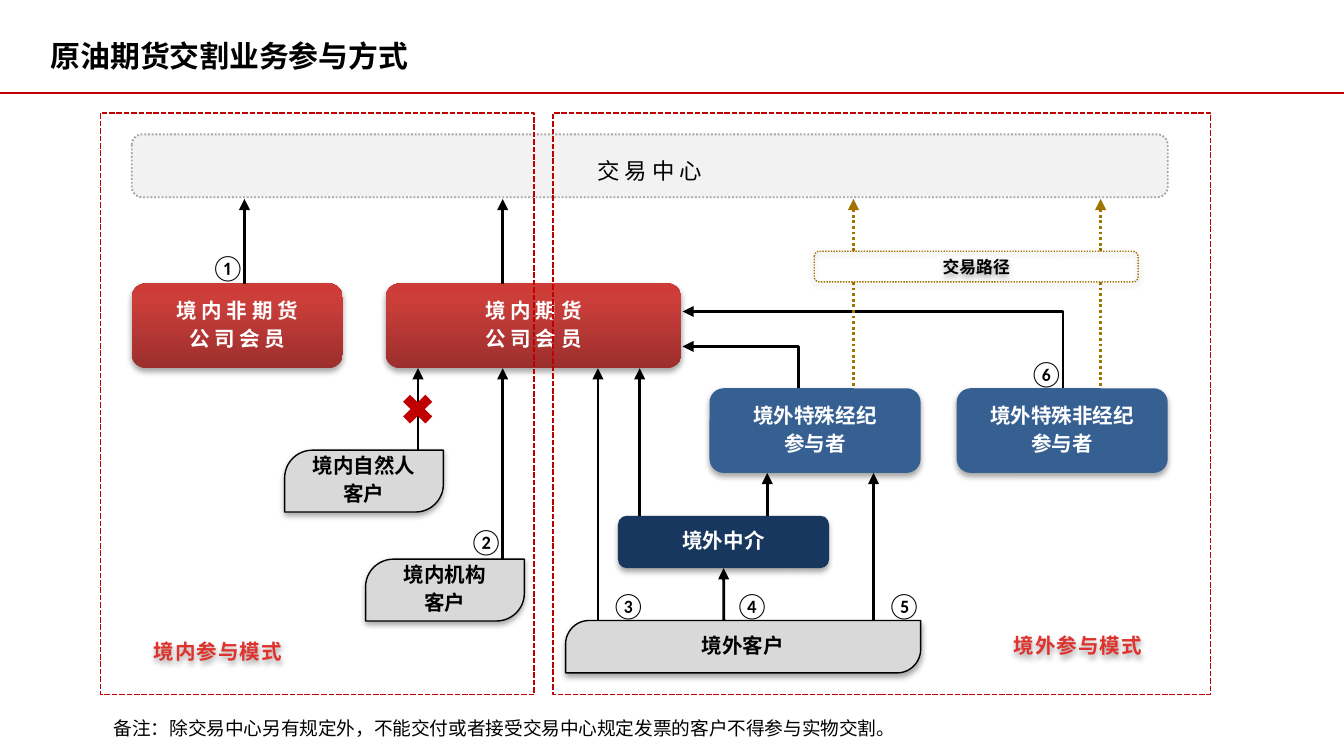
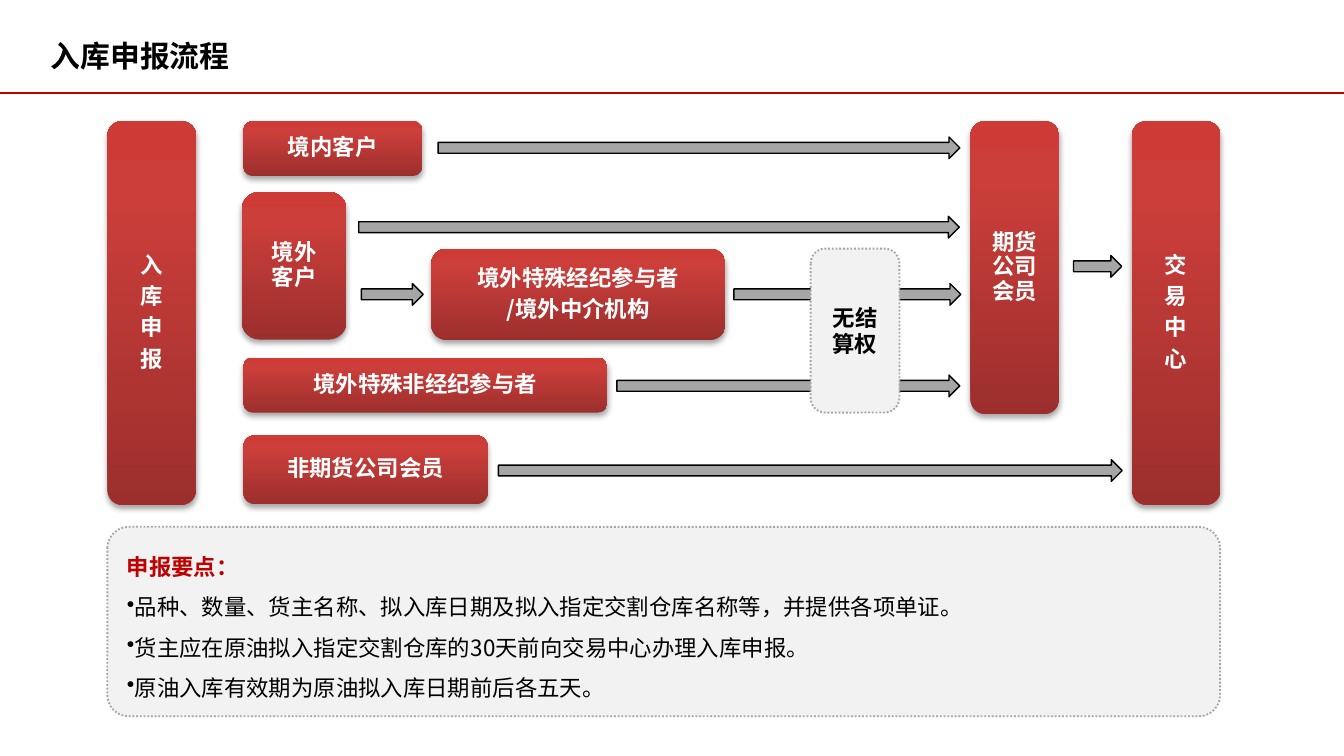
"""Builds two slides on crude oil futures delivery: ways to take part and the inbound filing flow."""
from copy import deepcopy

from lxml.etree import SubElement
from pptx import Presentation
from pptx.dml.color import RGBColor as RGB
from pptx.enum.dml import MSO_LINE as DASH
from pptx.enum.shapes import MSO_CONNECTOR as CONN, MSO_SHAPE as SHP
from pptx.enum.text import MSO_ANCHOR as ANC, PP_ALIGN as AL
from pptx.oxml.ns import qn
from pptx.util import Cm, Pt

C = {
    "black": "000000", "white": "FFFFFF", "red": "C00000", "gold": "A07400",
    "client": "D9D9D9", "pale": "F2F2F2", "grey": "A6A6A6",
    "blue": "376092", "navy": "17375E",
    "grad_dark": "9C2F2D", "grad_mid": "CB3E3A", "grad_top": "CE3B37",
    "mode_top": "E0322D", "mode_low": "A2201C",
}
FONT = "Noto Sans CJK SC"
RED_GRAD = [(0, "grad_dark"), (0.8, "grad_mid"), (1, "grad_top")]
MODE_GRAD = [(0.25, "mode_top"), (1, "mode_low")]

PAD = dict(margin_left=Cm(0.3), margin_right=Cm(0.3), margin_top=Cm(0.3), margin_bottom=Cm(0.3))
FLAT = dict(margin_left=0, margin_right=0, margin_top=0, margin_bottom=0)
TIGHT = dict(alignment=AL.CENTER, line_spacing=0.9, space_after=Pt(3.3))
CENTRE = dict(alignment=AL.CENTER)
BOLD11 = dict(size=Pt(11), bold=True)
BOLD12 = dict(size=Pt(12), bold=True)

BLOCK = dict(shadow=True, frame=PAD, para=TIGHT, font=BOLD11, color="white")
RED = dict(BLOCK, fill=RED_GRAD)
RED12 = dict(RED, font=BOLD12, para=dict(TIGHT, space_after=Pt(3.7)))
BLUE = dict(BLOCK, fill="blue")
NAVY = dict(BLOCK, fill="navy")
CLIENT = dict(BLOCK, fill="client", line=("black", 0.75, None), color="black", adj=(0.449, 0))
PANEL = dict(fill="pale", line=("grey", 1, DASH.ROUND_DOT))
CENTER_BAR = dict(PANEL, font=dict(size=Pt(12)), para=dict(CENTRE, line_spacing=Pt(20)))
POINTS = dict(PANEL, adj=(0.112,), frame=dict(vertical_anchor=ANC.TOP), font=dict(size=Pt(12)),
              para=dict(alignment=AL.LEFT, line_spacing=1.5))
NO_RIGHT = dict(PANEL, font=BOLD12, para=CENTRE)
ZONE = dict(line=("red", 1, DASH.SQUARE_DOT))
ROUTE = dict(line=("gold", 0.75, DASH.ROUND_DOT), shadow=True, frame=FLAT, para=CENTRE,
             font=dict(size=Pt(9), bold=True))
ARROW = dict(fill="grey", line=("black", 0.75, None))
TITLE = dict(font=dict(size=Pt(16), bold=True))
MODE = dict(BLOCK, color="mode_top")
NUMBER = dict(para=CENTRE, font=dict(size=Pt(14), name="Calibri"))
NOTE = dict(frame=dict(margin_top=0, margin_bottom=0, vertical_anchor=ANC.TOP),
            para=dict(line_spacing=1.5), font=dict(size=Pt(10)))


def add(s, kind, box, lines, st):
    box = [Cm(v) for v in box]
    sp = s.shapes.add_shape(kind, *box) if kind else s.shapes.add_textbox(*box)
    for i, v in enumerate(st.get("adj", ())):
        sp.adjustments[i] = v
    fill = st.get("fill")
    if fill is None:
        sp.fill.background()
    elif isinstance(fill, str):
        sp.fill.solid()
        sp.fill.fore_color.rgb = RGB.from_string(C[fill])
    else:
        sp.fill.gradient()
        sp.fill.gradient_angle = 90
        stops = sp._element.spPr.find(qn("a:gradFill")).find(qn("a:gsLst"))
        stops.append(deepcopy(stops[-1]))
        for stop, (pos, name) in zip(sp.fill.gradient_stops, fill):
            stop.position = pos
            stop.color.rgb = RGB.from_string(C[name])
    if "line" in st:
        name, width, dash = st["line"]
        sp.line.color.rgb = RGB.from_string(C[name])
        sp.line.width = Pt(width)
        if dash:
            sp.line.dash_style = dash
    else:
        sp.line.fill.background()
    sp.shadow.inherit = False
    if st.get("shadow"):
        effects = sp._element.spPr.find(qn("a:effectLst"))
        shadow = SubElement(effects, qn("a:outerShdw"), blurRad="40000", dist="23000",
                            dir="5400000", rotWithShape="0")
        tint = SubElement(shadow, qn("a:srgbClr"), val=C["black"])
        SubElement(tint, qn("a:alpha"), val="35000")
    tf = sp.text_frame
    frame = dict(word_wrap=True, vertical_anchor=ANC.MIDDLE) | st.get("frame", {})
    for key, v in frame.items():
        setattr(tf, key, v)
    for i, text in enumerate(lines):
        p = tf.add_paragraph() if i else tf.paragraphs[0]
        for key, v in st.get("para", {}).items():
            setattr(p, key, v)
        r = p.add_run()
        r.text = text
        font = dict(name=FONT) | st["font"]
        for key, v in font.items():
            setattr(r.font, key, v)
        r.font.color.rgb = RGB.from_string(C[st.get("color", "black")])
        SubElement(r._r.get_or_add_rPr(), qn("a:ea"), typeface=font["name"])
    return sp


def link(s, start, end, color="black", width=1.5, dash=None, head=True):
    (x1, y1), (x2, y2) = start, end
    bent = x1 != x2 and y1 != y2
    if bent:
        mx, my, w, h = (x1 + x2) / 2, (y1 + y2) / 2, y1 - y2, x1 - x2
        x1, y1, x2, y2 = mx - w / 2, my + h / 2, mx + w / 2, my - h / 2
    c = s.shapes.add_connector(CONN.ELBOW if bent else CONN.STRAIGHT, Cm(x1), Cm(y1), Cm(x2), Cm(y2))
    pr = c._element.spPr
    if bent:
        pr.find(qn("a:xfrm")).set("rot", "16200000")
        pr.find(qn("a:prstGeom")).set("prst", "bentConnector2")
    c.line.color.rgb = RGB.from_string(C[color])
    c.line.width = Pt(width)
    if dash:
        c.line.dash_style = dash
    if head:
        SubElement(pr.find(qn("a:ln")), qn("a:tailEnd"), type="triangle")
    SubElement(pr, qn("a:effectLst"))
    return c


prs = Presentation()
prs.slide_width, prs.slide_height = Cm(25.4), Cm(14.29)
slides = []
for title in ("原油期货交割业务参与方式", "入库申报流程"):
    s = prs.slides.add_slide(prs.slide_layouts[6])
    link(s, (0, 1.75), (25.4, 1.75), "red", 1, head=False)
    add(s, None, (0.71, 0.36, 23.8, 1.4), [title], TITLE)
    slides.append(s)
modes, flow = slides

add(modes, SHP.ROUNDED_RECTANGLE, (2.49, 2.54, 19.58, 1.19), ["交 易 中 心"], CENTER_BAR)
for box, lines in [
    ((5.38, 8.51, 3, 1.17), ["境内自然人", "客户"]),
    ((6.91, 10.57, 3, 1.17), ["境内机构", "客户"]),
    ((10.69, 11.73, 6.71, 0.99), ["境外客户"]),
]:
    add(modes, SHP.ROUND_2_DIAG_RECTANGLE, box, lines, CLIENT)
for box, lines, st in [
    ((7.29, 5.36, 5.59, 1.6), ["境 内 期 货", "公 司 会 员"], RED),
    ((2.49, 5.36, 3.99, 1.6), ["境 内 非 期 货", "公 司 会 员"], RED),
    ((13.41, 7.34, 3.99, 1.6), ["境外特殊经纪", "参与者"], BLUE),
    ((18.08, 7.34, 3.99, 1.6), ["境外特殊非经纪", "参与者"], BLUE),
]:
    add(modes, SHP.ROUNDED_RECTANGLE, box, lines, st)
broker = add(modes, SHP.ROUNDED_RECTANGLE, (11.68, 9.75, 3.99, 0.99), ["境外中介"], NAVY)

for left, width in [(1.9, 8.2), (10.46, 12.42)]:
    add(modes, SHP.RECTANGLE, (left, 2.13, width, 11), [], ZONE)
for left, top, text in [(2.31, 11.94, "境内参与模式"), (18.57, 11.84, "境外参与模式")]:
    r = add(modes, None, (left, top, 3.61, 0.79), [text], MODE).text_frame.paragraphs[0].runs[0]
    r.font.fill.gradient()
    r.font.fill.gradient_angle = 270
    for stop, (pos, name) in zip(r.font.fill.gradient_stops, MODE_GRAD):
        stop.position = pos
        stop.color.rgb = RGB.from_string(C[name])
    r._r.get_or_add_rPr().set("spc", "50")

for x, y1, y2 in [
    (4.62, 5.36, 3.76), (9.5, 5.36, 3.76), (7.9, 8.51, 6.96), (9.5, 10.57, 6.96),
    (11.3, 11.73, 6.96), (12.09, 9.75, 6.96), (14.5, 9.75, 8.94), (16.51, 11.73, 8.94),
]:
    link(modes, (x, y1), (x, y2))
link(modes, (13.68, 11.73), (13.68, 10.74)).end_connect(broker, 2)
for start, y in [((15.09, 7.34), 6.55), ((20.09, 7.34), 5.89)]:
    link(modes, start, (12.9, y))
for x in (16.13, 20.8):
    link(modes, (x, 4.75), (x, 3.76), "gold", dash=DASH.ROUND_DOT)
    link(modes, (x, 5.33), (x, 7.34), "gold", dash=DASH.ROUND_DOT, head=False)
add(modes, SHP.ROUNDED_RECTANGLE, (15.39, 4.75, 6.12, 0.58), ["交易路径"], ROUTE)
add(modes, SHP.MATH_MULTIPLY, (7.49, 7.34, 0.81, 0.79), [], dict(fill="red"))

spots = [(3.73, 4.75), (8.61, 9.93), (11.3, 11.15), (13.64, 11.15), (16.51, 11.15), (19.2, 6.76)]
for number, (x, y) in zip("①②③④⑤⑥", spots):
    add(modes, None, (x, y, 0.89, 0.58), [number], NUMBER)
add(modes, None, (1.9, 13.34, 21, 0.64),
    ["备注：除交易中心另有规定外，不能交付或者接受交易中心规定发票的客户不得参与实物交割。"], NOTE)

for left, top, width in [
    (8.28, 2.59, 9.86), (6.78, 4.09, 11.35), (6.83, 5.36, 1.17), (13.87, 5.36, 4.29),
    (11.66, 7.09, 6.48), (9.42, 8.69, 11.79), (20.29, 4.83, 0.91),
]:
    add(flow, SHP.RIGHT_ARROW, (left, top, width, 0.41), [], ARROW)
for box, lines in [
    ((2.03, 2.29, 1.68, 7.26), list("入库申报")),
    ((4.6, 2.29, 3.38, 1.04), ["境内客户"]),
    ((4.57, 3.63, 1.98, 2.79), ["境外客户"]),
    ((8.15, 4.7, 5.56, 1.73), ["境外特殊经纪参与者", "/境外中介机构"]),
    ((4.6, 6.76, 6.88, 1.04), ["境外特殊非经纪参与者"]),
    ((4.6, 8.23, 4.62, 1.3), ["非期货公司会员"]),
    ((18.34, 2.29, 1.68, 5.54), ["期货公司会员"]),
    ((21.39, 2.29, 1.68, 7.26), list("交易中心")),
]:
    add(flow, SHP.ROUNDED_RECTANGLE, box, lines, RED12)
add(flow, SHP.ROUNDED_RECTANGLE, (15.32, 4.7, 1.68, 3.1), ["无结算权"], NO_RIGHT)

points = add(flow, SHP.ROUNDED_RECTANGLE, (2.03, 9.96, 21.03, 3.58), [
    "申报要点：",
    "品种、数量、货主名称、拟入库日期及拟入指定交割仓库名称等，并提供各项单证。",
    "货主应在原油拟入指定交割仓库的30天前向交易中心办理入库申报。",
    "原油入库有效期为原油拟入库日期前后各五天。",
], POINTS)
heading, *items = points.text_frame.paragraphs
heading.runs[0].font.bold = True
heading.runs[0].font.color.rgb = RGB.from_string(C["red"])
for p in items:
    SubElement(p._p.get_or_add_pPr(), qn("a:buChar"), char="•")

prs.save("out.pptx")
